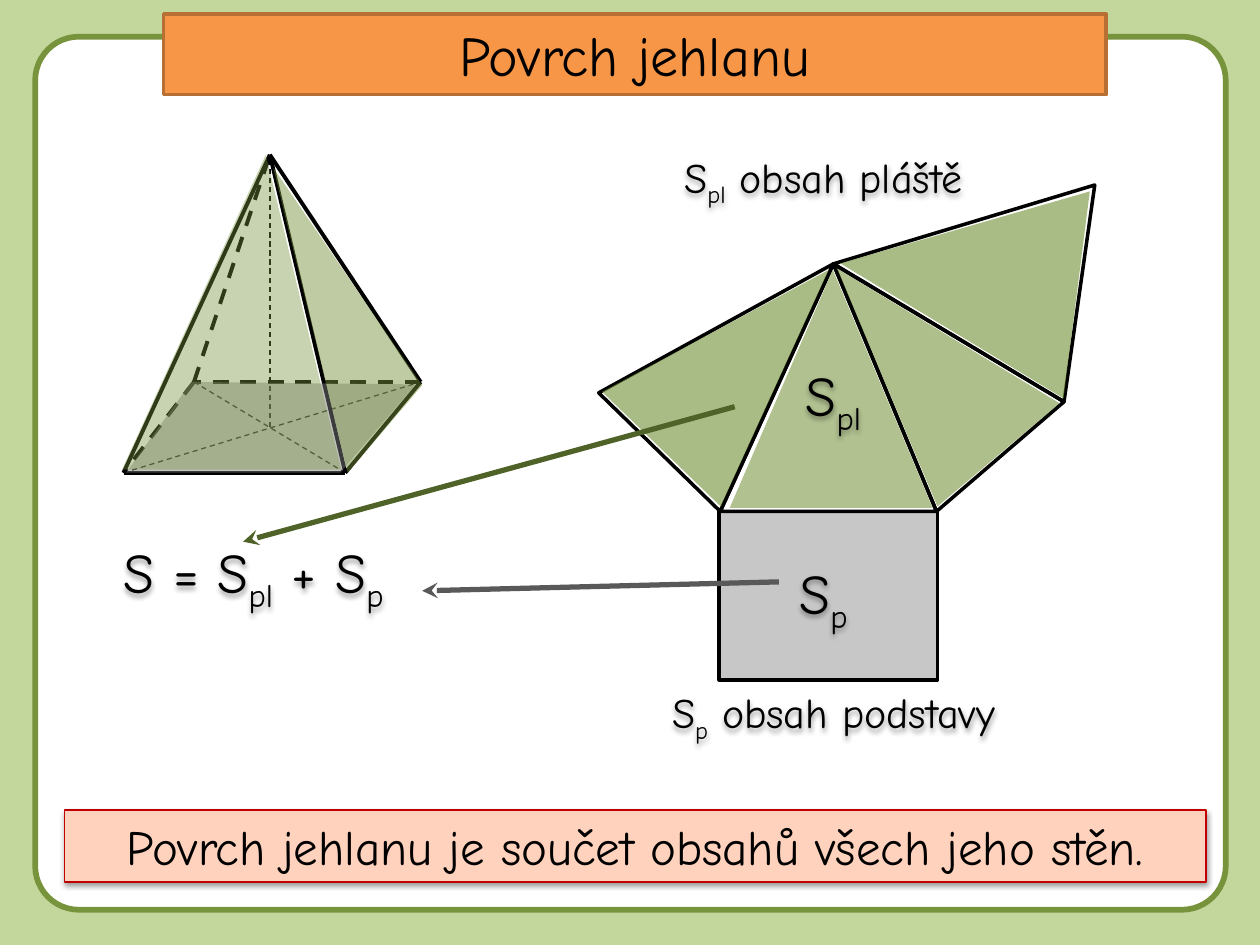
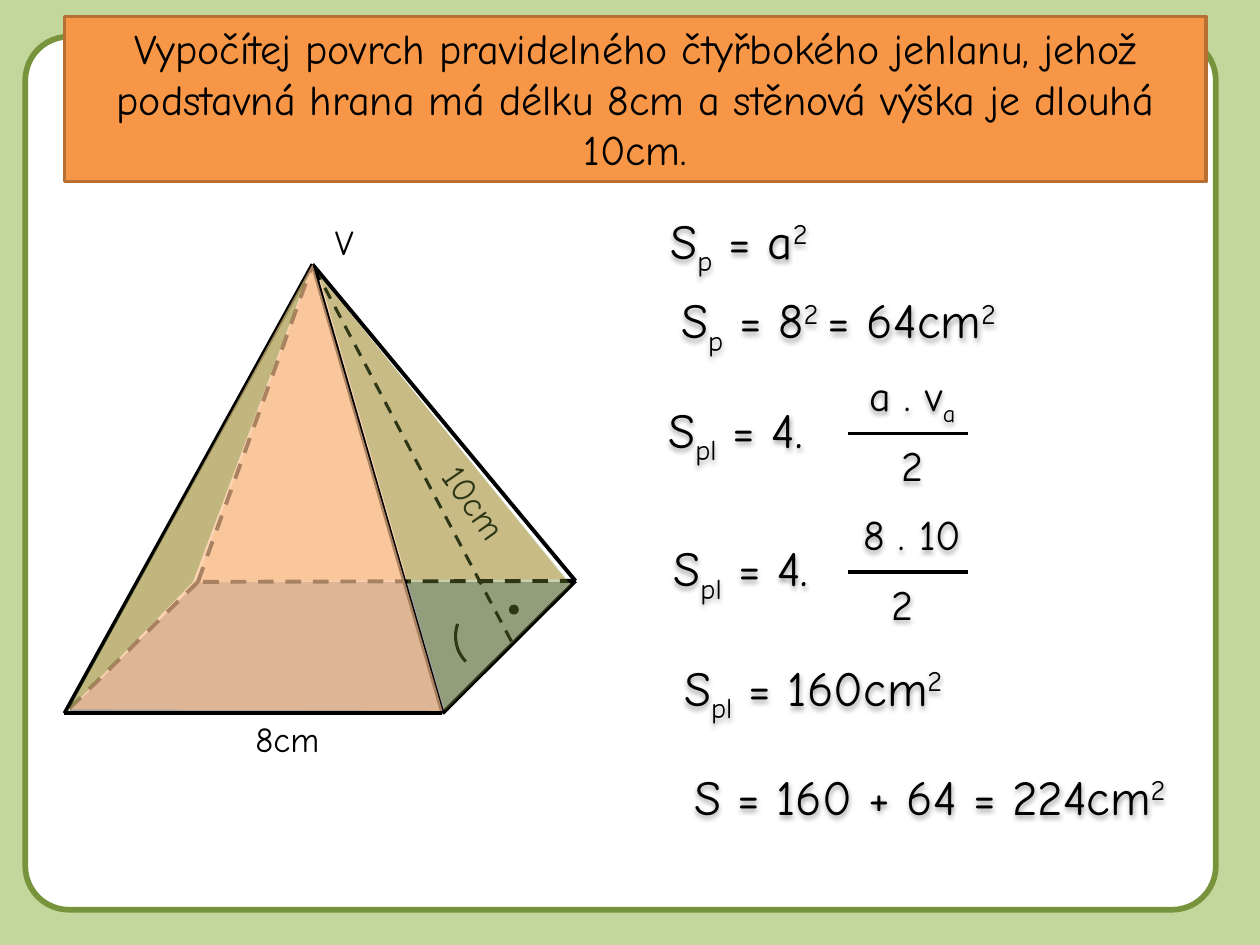
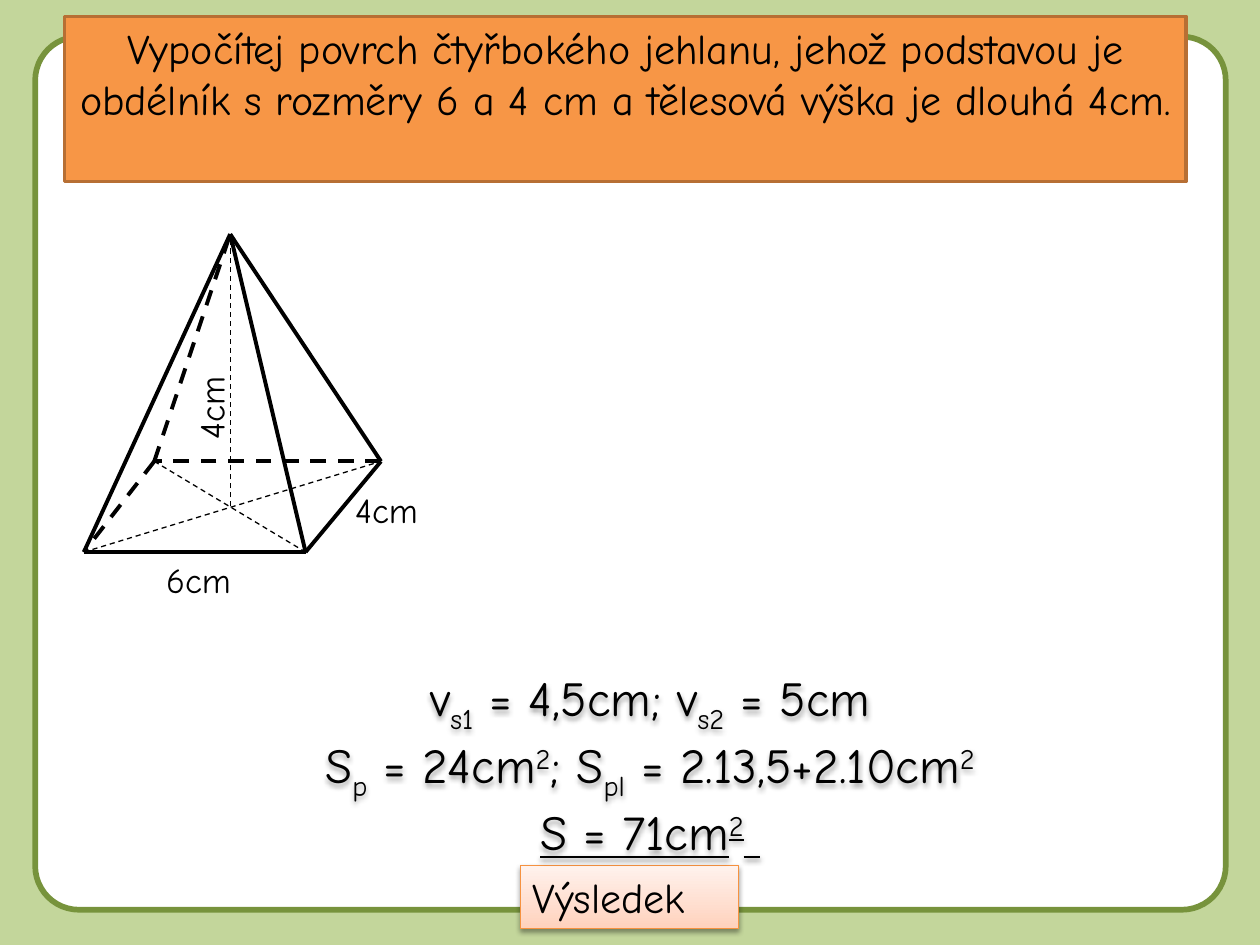
"""Build three slides about the surface area of a pyramid."""
from dataclasses import dataclass
from typing import Optional

import lxml.etree
import pptx
import pptx.dml.color
import pptx.enum.dml
import pptx.enum.shapes
import pptx.enum.text
import pptx.oxml.ns
import pptx.util

Point = tuple[float, float]
qn = pptx.oxml.ns.qn
Cm = pptx.util.Cm
CENTER = pptx.enum.text.PP_ALIGN.CENTER
LEFT = pptx.enum.text.PP_ALIGN.LEFT
BASELINES = {"_": "-25000", "^": "30000"}


@dataclass(frozen=True)
class Theme:
    font: str = "Comic Neue"
    heading: int = 32
    formula: int = 28
    body: int = 24
    small: int = 20
    edge: float = 2.25
    net_edge: float = 2
    text: str = "000000"
    background: str = "C3D69B"
    panel: str = "FFFFFF"
    panel_line: str = "77933C"
    title_fill: str = "F79646"
    title_line: str = "B76F34"
    side: str = "77933C"
    front: str = "FAC090"
    base: str = "808080"
    banner: str = "FFD2BD"
    banner_line: str = "C00000"
    button_light: str = "FFF2ED"
    button_line: str = "F69240"
    lateral_arrow: str = "4F6228"
    base_arrow: str = "595959"


THEME = Theme()


@dataclass(frozen=True)
class Box:
    left: float
    top: float
    width: float
    height: float

    def lengths(self) -> tuple:
        """Return the box as four lengths."""
        return Cm(self.left), Cm(self.top), Cm(self.width), Cm(self.height)


@dataclass(frozen=True)
class Label:
    text: str
    left: float
    top: float
    width: float
    size: int = THEME.formula
    align: int = CENTER
    shadow: bool = True
    rotation: float = 0

    def box(self) -> Box:
        """Return a box high enough for every line of the label."""
        lines = self.text.count("\n") + 1
        return Box(self.left, self.top, self.width, 0.19 + 0.045 * self.size * lines)


@dataclass(frozen=True)
class Face:
    points: tuple[Point, ...]
    fill: str
    opacity: int


@dataclass(frozen=True)
class Fraction:
    middle: float
    label_left: float
    numerator: str
    denominator_left: float


@dataclass(frozen=True)
class Pyramid:
    front_left: Point
    front_right: Point
    back_right: Point
    back_left: Point
    apex: Point
    center: Optional[Point] = None

    def moved(self, right: float, down: float) -> "Pyramid":
        """Return the same pyramid at another place."""
        corners = (self.front_left, self.front_right, self.back_right,
                   self.back_left, self.apex, self.center)
        return Pyramid(*((x + right, y + down) for x, y in corners))


PYRAMID = Pyramid((2.49, 9.53), (6.96, 9.53), (8.48, 7.7), (3.91, 7.7), (5.44, 3.12), (5.44, 8.61))


def color(value: str) -> pptx.dml.color.RGBColor:
    """Turn a hex value into a colour."""
    return pptx.dml.color.RGBColor.from_string(value)


def write_text(frame, text: str, *, size: int, align=CENTER) -> None:
    """Write lines whose runs are split by |, marked _ low, ^ high; a line marked ~ is underlined."""
    frame.word_wrap = True
    frame.auto_size = pptx.enum.text.MSO_AUTO_SIZE.NONE
    frame.vertical_anchor = pptx.enum.text.MSO_ANCHOR.TOP
    for index, line in enumerate(text.split("\n")):
        paragraph = frame.add_paragraph() if index else frame.paragraphs[0]
        paragraph.alignment = align
        for part in line.removeprefix("~").split("|"):
            run = paragraph.add_run()
            run.text = part.lstrip("_^")
            run.font.name = THEME.font
            run.font.size = pptx.util.Pt(size)
            run.font.color.rgb = color(THEME.text)
            if line.startswith("~"):
                run.font.underline = True
            if part[0] in BASELINES:
                run.font._element.set("baseline", BASELINES[part[0]])


def add_shadow(shape) -> None:
    """Give a shape a soft shadow below it."""
    effects = shape.element.spPr.find(qn("a:effectLst"))
    shadow = lxml.etree.SubElement(effects, qn("a:outerShdw"), blurRad="39370", dist="20320",
                                   dir="5400000", rotWithShape="0")
    shade = lxml.etree.SubElement(shadow, qn("a:srgbClr"), val=THEME.text)
    lxml.etree.SubElement(shade, qn("a:alpha"), val="38000")


def style_shape(shape, fill: Optional[str] = None, line: Optional[str] = None,
                width: float = 1, opacity: int = 100) -> None:
    """Set the fill, the outline and no shadow."""
    shape.shadow.inherit = False
    if fill:
        shape.fill.solid()
        shape.fill.fore_color.rgb = color(fill)
        if opacity < 100:
            shade = shape.element.spPr.find(qn("a:solidFill"))[0]
            lxml.etree.SubElement(shade, qn("a:alpha"), val=str(opacity * 1000))
    else:
        shape.fill.background()
    if line:
        shape.line.color.rgb = color(line)
        shape.line.width = pptx.util.Pt(width)
    else:
        shape.line.fill.background()


def add_preset(slide, kind: str, box: Box, **style):
    """Add a styled preset shape."""
    shape = slide.shapes.add_shape(getattr(pptx.enum.shapes.MSO_SHAPE, kind), *box.lengths())
    style_shape(shape, **style)
    return shape


def add_polygon(slide, points: tuple[Point, ...], **style) -> None:
    """Add a closed outline through the points."""
    corners = [(Cm(x), Cm(y)) for x, y in points]
    builder = slide.shapes.build_freeform(*corners[0])
    builder.add_line_segments(corners[1:], close=True)
    style_shape(builder.convert_to_shape(), **style)


def add_faces(slide, *faces: Face) -> None:
    """Add translucent faces."""
    for face in faces:
        add_polygon(slide, face.points, fill=face.fill, opacity=face.opacity)


def add_line(slide, start: Point, end: Point, width: float, *, dashed: bool = False,
             arrow: bool = False, line: str = THEME.text) -> None:
    """Add a straight line, dashed or with an arrowhead on request."""
    connector = slide.shapes.add_connector(
        pptx.enum.shapes.MSO_CONNECTOR.STRAIGHT, *(Cm(value) for value in start + end))
    connector.line.color.rgb = color(line)
    connector.line.width = pptx.util.Pt(width)
    if dashed:
        connector.line.dash_style = pptx.enum.dml.MSO_LINE.DASH
    properties = connector.element.spPr
    if arrow:
        lxml.etree.SubElement(properties.find(qn("a:ln")), qn("a:tailEnd"), type="stealth")
    lxml.etree.SubElement(properties, qn("a:effectLst"))


def add_pyramid(slide, pyramid: Pyramid) -> None:
    """Draw the edges, and the diagonals and height where the centre is known."""
    corners = (pyramid.front_left, pyramid.front_right, pyramid.back_right, pyramid.back_left)
    for index, corner in enumerate(corners):
        following = corners[(index + 1) % 4]
        add_line(slide, corner, following, THEME.edge, dashed=index >= 2)
        add_line(slide, corner, pyramid.apex, THEME.edge, dashed=index == 3)
    if pyramid.center:
        for start, end in ((corners[0], corners[2]), (corners[3], corners[1]),
                           (pyramid.center, pyramid.apex)):
            add_line(slide, start, end, 0.75, dashed=True)


def add_labels(slide, *labels: Label) -> None:
    """Add text boxes."""
    for label in labels:
        shape = slide.shapes.add_textbox(*label.box().lengths())
        shape.rotation = label.rotation
        write_text(shape.text_frame, label.text, size=label.size, align=label.align)
        if label.shadow:
            shape.shadow.inherit = False
            add_shadow(shape)


def add_measures(slide, *measures: tuple) -> None:
    """Add small plain labels given as text, left, top, width and rotation."""
    for text, left, top, width, rotation in measures:
        add_labels(slide, Label(text, left, top, width, THEME.small, LEFT, False, rotation))


def add_fraction(slide, fraction: Fraction) -> None:
    """Add a formula that ends in a fraction."""
    middle = fraction.middle
    add_line(slide, (17.09, middle), (19.51, middle), 2)
    add_labels(
        slide,
        Label("S|_pl| = 4. ", fraction.label_left, middle - 0.81, 17.09 - fraction.label_left),
        Label(fraction.numerator, 16.89, middle - 1.41, 3, THEME.body),
        Label("2", fraction.denominator_left, middle, 3, THEME.body))


def add_slide(presentation, title: str, box: Box, size: int = THEME.body, panel_left: float = 0.71):
    """Add a slide with the rounded panel and the title band."""
    slide = presentation.slides.add_slide(presentation.slide_layouts[5])
    panel = add_preset(slide, "ROUNDED_RECTANGLE", Box(panel_left, 0.74, 24, 17.6),
                       fill=THEME.panel, line=THEME.panel_line, width=3.25)
    panel.adjustments[0] = 0.05
    heading = slide.shapes.title
    heading.left, heading.top, heading.width, heading.height = box.lengths()
    style_shape(heading, fill=THEME.title_fill, line=THEME.title_line, width=2)
    write_text(heading.text_frame, title, size=size)
    heading.element.addprevious(panel.element)
    return slide


def add_surface_slide(presentation) -> None:
    """Explain the surface with a pyramid and its net."""
    slide = add_slide(presentation, "Povrch jehlanu", Box(3.3, 0.28, 19, 1.63), THEME.heading)
    add_pyramid(slide, PYRAMID)
    add_preset(slide, "RECTANGLE", Box(14.5, 10.31, 4.4, 3.4), fill=THEME.base, opacity=44,
               line=THEME.text, width=THEME.net_edge)
    net_apex = (16.8, 5.32)
    rim = ((12.07, 7.92), (14.52, 10.31), (18.88, 10.31), (21.45, 8.1), (22.07, 3.73))
    for start, end in zip(rim, rim[1:]):
        add_polygon(slide, (start, net_apex, end), line=THEME.text, width=THEME.net_edge)
    add_faces(
        slide,
        Face(((2.54, 9.53), (6.86, 9.53), (8.38, 7.75), (3.86, 7.7)), THEME.base, 47),
        Face(((2.46, 9.47), (6.88, 9.47), (5.36, 3.12)), THEME.side, 40),
        Face(((7.01, 9.53), (8.51, 7.77), (5.51, 3.38)), THEME.side, 47),
        Face(((16.79, 5.44), (14.71, 10.24), (18.8, 10.24)), THEME.side, 57),
        Face(((16.94, 5.31), (21.44, 8.03), (21.97, 3.86)), THEME.side, 62),
        Face(((16.87, 5.41), (18.9, 10.21), (21.36, 8.13)), THEME.side, 59),
        Face(((16.71, 5.44), (12.14, 7.9), (14.53, 10.21)), THEME.side, 62))
    add_labels(
        slide,
        Label("S|_pl| obsah pláště", 12.9, 2.92, 7.39, THEME.body),
        Label("S|_p| obsah podstavy", 11.51, 13.72, 10.59, THEME.body),
        Label("S|_pl", 14.3, 7.14, 5, THEME.heading),
        Label("S|_p", 14.1, 11.13, 5, THEME.heading),
        Label("S = S|_pl| + S|_p", 1.91, 10.72, 6.4, THEME.heading))
    banner = add_preset(slide, "RECTANGLE", Box(1.3, 16.33, 23.01, 1.45),
                        fill=THEME.banner, line=THEME.banner_line)
    add_shadow(banner)
    write_text(banner.text_frame, "Povrch jehlanu je součet obsahů všech jeho stěn.",
               size=THEME.formula)
    add_line(slide, (14.81, 8.2), (4.9, 10.92), 3, arrow=True, line=THEME.lateral_arrow)
    add_line(slide, (15.7, 11.73), (8.51, 11.91), 3, arrow=True, line=THEME.base_arrow)


def add_square_base_slide(presentation) -> None:
    """Work out the surface of a pyramid with a square base."""
    slide = add_slide(
        presentation,
        "Vypočítej povrch pravidelného čtyřbokého jehlanu, jehož podstavná hrana má délku 8cm "
        "a stěnová výška je dlouhá 10cm.",
        Box(1.3, 0.33, 23.01, 3.33), panel_left=0.51)
    pyramid = Pyramid((1.3, 14.38), (8.92, 14.38), (11.6, 11.71), (3.99, 11.73), (6.3, 5.33))
    add_faces(
        slide,
        Face(((6.3, 5.38), (3.96, 11.73), (11.4, 11.68)), THEME.front, 66),
        Face(((1.35, 14.38), (8.89, 14.38), (11.51, 11.73), (3.99, 11.73)), THEME.base, 71))
    add_measures(slide, ("8cm", 4.9, 14.33, 2.39, 0), ("10cm", 8.46, 9.68, 2.39, 54.6),
                 ("V", 6.5, 4.32, 1.19, 0))
    add_pyramid(slide, pyramid)
    arc = add_preset(slide, "ARC", Box(9.17, 11.94, 1.85, 1.63), line=THEME.text, width=1.75)
    arc.adjustments[0] = 97.2
    arc.adjustments[1] = 127.86
    arc.rotation = 338.4
    add_preset(slide, "OVAL", Box(10.26, 12.19, 0.2, 0.2), fill=THEME.text)
    add_line(slide, (10.31, 12.93), pyramid.apex, 1.75, dashed=True)
    add_faces(
        slide,
        Face(((1.4, 14.3), (8.92, 14.33), (6.3, 5.33)), THEME.front, 68),
        Face(((8.97, 14.33), (11.51, 11.79), (6.43, 5.54)), THEME.side, 38),
        Face(((1.35, 14.35), (3.89, 11.73), (6.22, 5.51)), THEME.side, 44))
    add_labels(
        slide,
        Label("S|_p| = a|^2", 12.5, 4.11, 4.8),
        Label("S|_p| = 8|^2 |= 64cm|^2 ", 12.9, 5.72, 8.2),
        Label("S|_pl| = 160cm|^2", 12.7, 13.13, 7.39),
        Label("S = 160 + 64 = 224cm|^2", 12.09, 15.32, 13.31))
    for fraction in (Fraction(8.74, 12.9, "a . v|_a", 16.89),
                     Fraction(11.53, 13.11, "8 . 10", 16.69)):
        add_fraction(slide, fraction)


def add_rectangular_base_slide(presentation) -> None:
    """Set a task on a pyramid with a rectangular base and give the result."""
    slide = add_slide(
        presentation,
        "Vypočítej povrch čtyřbokého jehlanu, jehož podstavou je obdélník s rozměry 6 a 4 cm "
        "a tělesová výška je dlouhá 4cm.",
        Box(1.3, 0.33, 22.61, 3.33))
    add_pyramid(slide, PYRAMID.moved(-0.8, 1.6))
    add_measures(slide, ("6cm", 3.1, 11.13, 2.39, 0), ("4cm", 6.91, 9.73, 2.39, 0),
                 ("4cm", 3.05, 7.37, 2.39, 270))
    button = add_preset(slide, "RECTANGLE", Box(10.49, 17.45, 4.4, 1.27),
                        line=THEME.button_line, width=0.75)
    button.fill.gradient()
    button.fill.gradient_angle = 90
    for stop, shade in zip(button.fill.gradient_stops, (THEME.banner, THEME.button_light)):
        stop.color.rgb = color(shade)
    add_shadow(button)
    write_text(button.text_frame, "Výsledek", size=THEME.body, align=LEFT)
    add_labels(slide, Label(
        "v|_s1| = 4,5cm; v|_s2| = 5cm\n"
        "S|_p| = 24cm|^2|; S|_pl| = 2.13,5+2.10cm|^2\n"
        "~S = 71cm|^2| ", 4.9, 13.34, 16.41))


def main() -> None:
    """Build and save the presentation."""
    presentation = pptx.Presentation()
    presentation.slide_width, presentation.slide_height = Cm(25.4), Cm(19.05)
    background = presentation.slide_master.background.fill
    background.solid()
    background.fore_color.rgb = color(THEME.background)
    add_surface_slide(presentation)
    add_square_base_slide(presentation)
    add_rectangular_base_slide(presentation)
    presentation.save("out.pptx")


if __name__ == "__main__":
    main()
